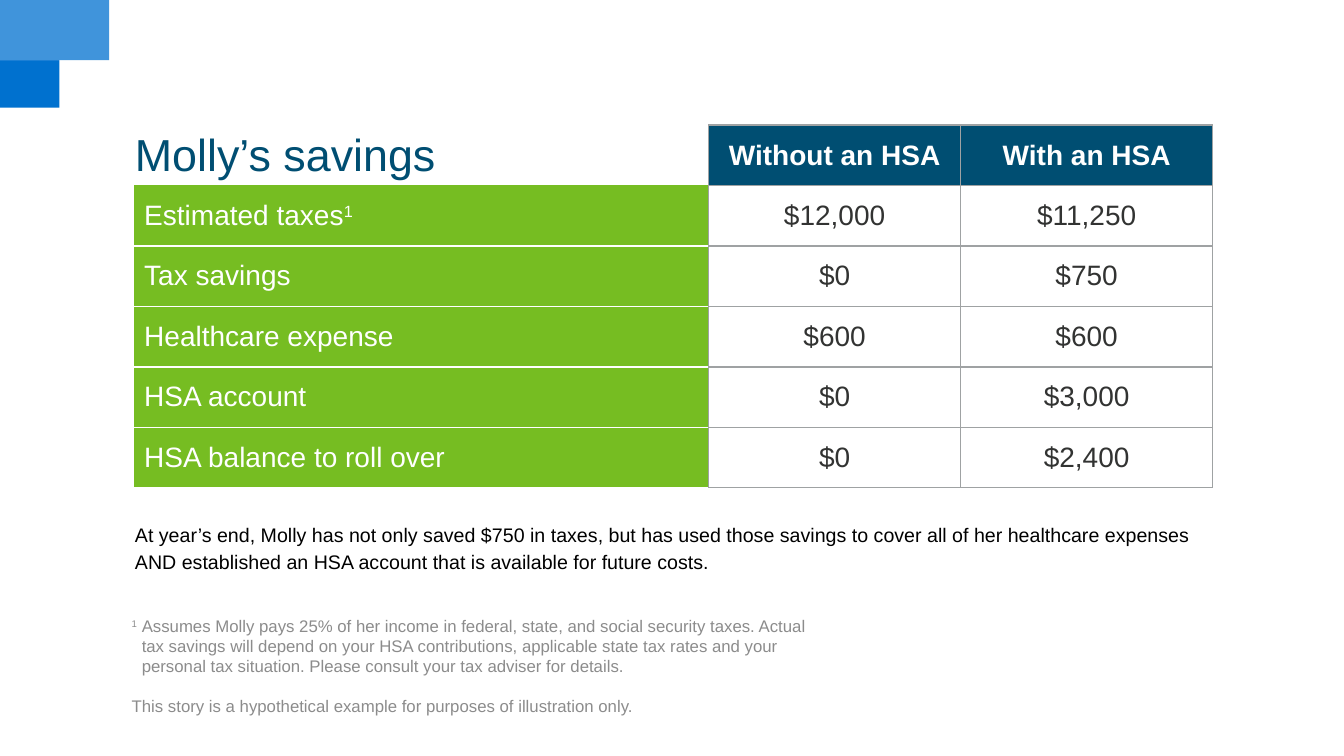
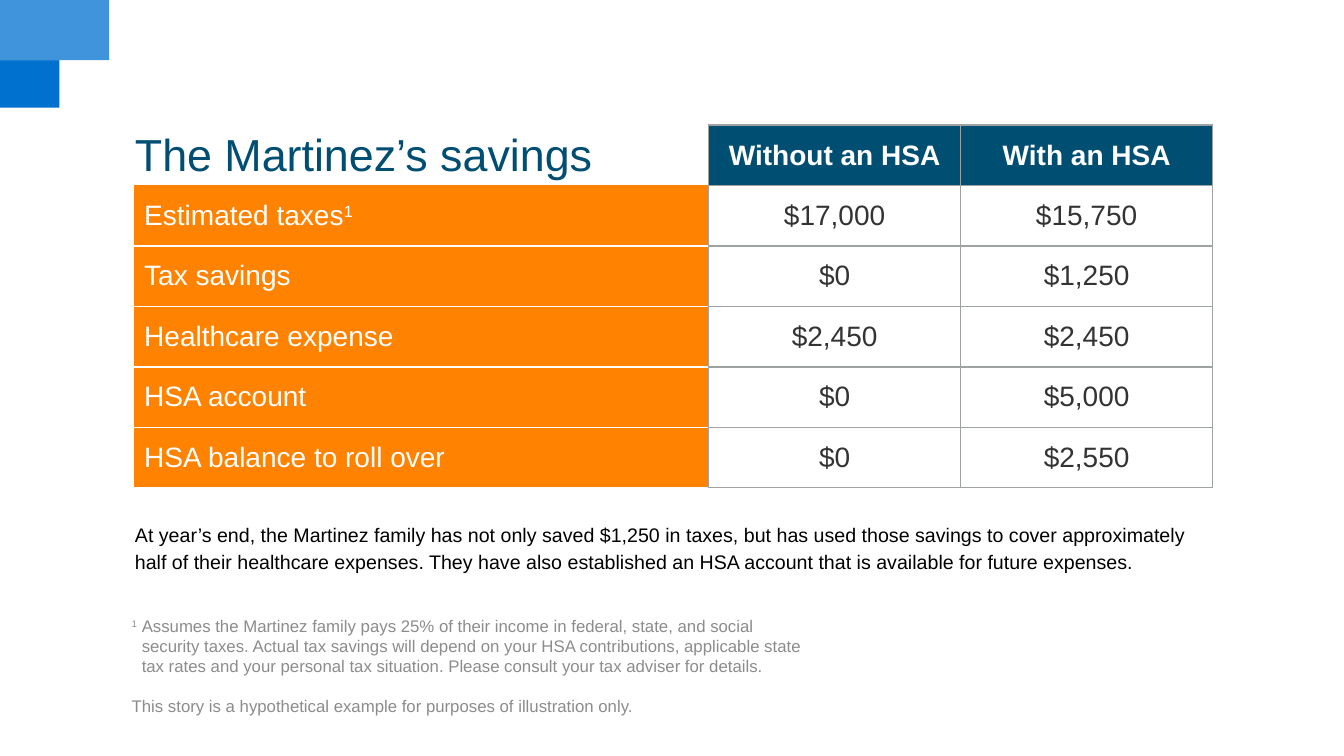
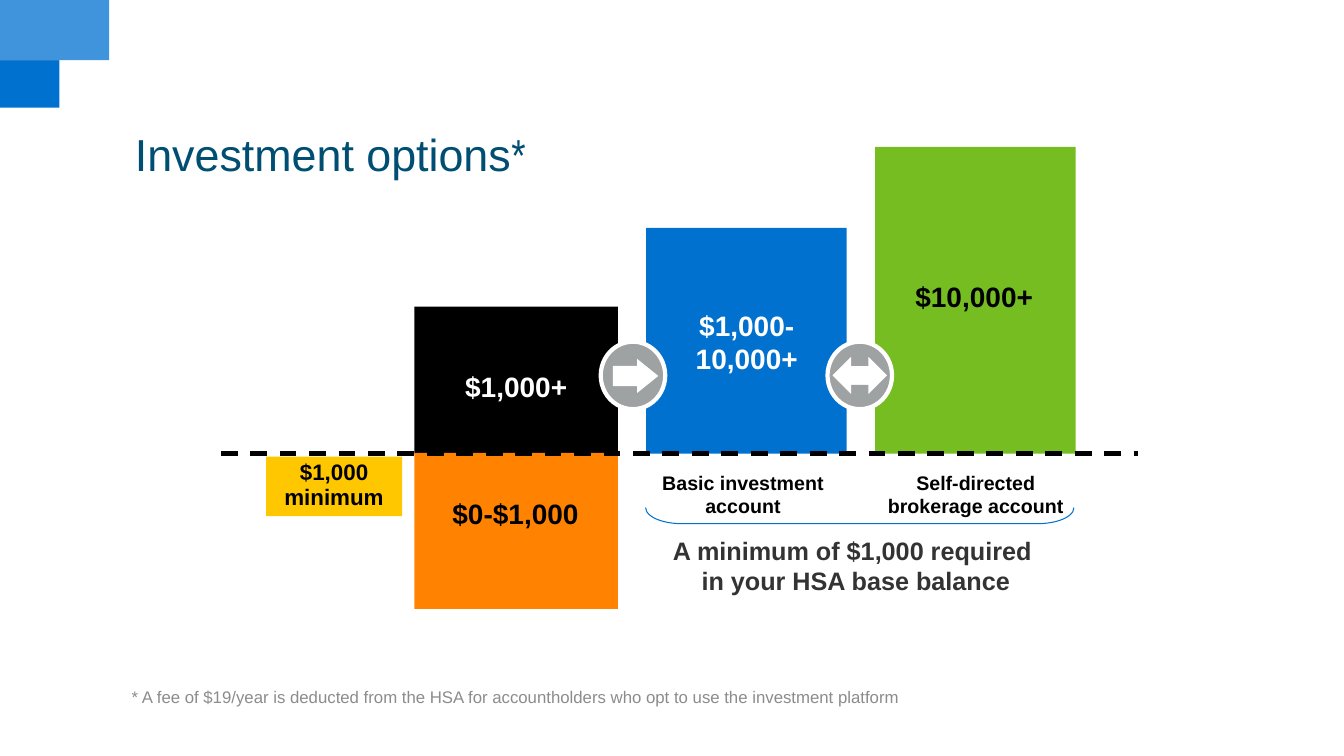
from lxml import etree
from pptx import Presentation
from pptx import util as u
from pptx.dml import color
from pptx.enum import dml, shapes, text
from pptx.oxml import ns

NAVY, BLUE, CORNER_BLUE = "004E72", "0071CE", "0071CF"
GREEN, ORANGE, YELLOW = "76BD22", "FF8300", "FFC700"
BLACK, WHITE, CHARCOAL = "000000", "FFFFFF", "323332"
GRAY, NOTE_GRAY = "9FA2A3", "8C8C8C"
CENTER, LEFT = text.PP_ALIGN.CENTER, text.PP_ALIGN.LEFT
TOP, MIDDLE = text.MSO_ANCHOR.TOP, text.MSO_ANCHOR.MIDDLE
KIND = shapes.MSO_SHAPE


def rgb(value):
    return color.RGBColor.from_string(value)


def add_xml(parent, tag, **attributes):
    return etree.SubElement(parent, ns.qn(tag), attributes)


def write(paragraph, content, size=20, fill=BLACK, bold=False, font="Arial",
          align=LEFT, superscript=False, line_spacing=None):
    paragraph.alignment = align
    if line_spacing:
        paragraph.line_spacing = line_spacing
    for number, line in enumerate(content.split("\n")):
        if number:
            paragraph.add_line_break()
        run = paragraph.add_run()
        run.text = line
        run.font.name, run.font.size = font, u.Pt(size)
        run.font.bold, run.font.color.rgb = bold, rgb(fill)
        if superscript:
            run.font._element.set("baseline", "30000")


class Deck:
    labels = ["Estimated taxes", "Tax savings", "Healthcare expense",
              "HSA account", "HSA balance to roll over"]
    headers = ["Without an HSA", "With an HSA"]

    def __init__(self):
        self.presentation = Presentation()
        self.presentation.slide_width = u.Pt(960)
        self.presentation.slide_height = u.Pt(540)
        self.slide = None

    def start(self, title):
        self.slide = self.presentation.slides.add_slide(self.presentation.slide_layouts[6])
        self.shape(KIND.RECTANGLE, 0, 0, 42.5, 77, CORNER_BLUE)
        self.shape(KIND.RECTANGLE, 0, 0, 78, 43, WHITE)
        tint = self.shape(KIND.RECTANGLE, 0, 0, 78, 43, CORNER_BLUE)
        tone = tint._element.spPr.find(".//" + ns.qn("a:srgbClr"))
        add_xml(tone, "a:alpha", val="75000")
        paragraph = self.box(87, 85.7, 796.3, 52.6, inset=(9.4, 5)).paragraphs[0]
        write(paragraph, title, size=32, fill=NAVY)
        return paragraph

    def shape(self, kind, left, top, width, height, fill=None, line=None,
              line_width=1, adjustments=(), rotation=0):
        shape = self.slide.shapes.add_shape(
            kind, u.Pt(left), u.Pt(top), u.Pt(width), u.Pt(height))
        shape.shadow.inherit = False
        shape.rotation = rotation
        for number, value in enumerate(adjustments):
            shape.adjustments[number] = value
        if fill:
            shape.fill.solid()
            shape.fill.fore_color.rgb = rgb(fill)
        else:
            shape.fill.background()
        if line:
            shape.line.color.rgb = rgb(line)
            shape.line.width = u.Pt(line_width)
        else:
            shape.line.fill.background()
        return shape

    def box(self, left, top, width, height, anchor=TOP, inset=(7.2, 3.6)):
        shape = self.slide.shapes.add_textbox(
            u.Pt(left), u.Pt(top), u.Pt(width), u.Pt(height))
        frame = shape.text_frame
        frame.word_wrap, frame.vertical_anchor = True, anchor
        frame.margin_left = frame.margin_right = u.Pt(inset[0])
        frame.margin_top = frame.margin_bottom = u.Pt(inset[1])
        return frame

    def caption(self, content, left, top, width, height, size=20, fill=BLACK):
        write(self.box(left, top, width, height).paragraphs[0], content,
              size=size, fill=fill, bold=True, align=CENTER)

    def dashed_line(self, left, right, top):
        line = self.slide.shapes.add_connector(
            shapes.MSO_CONNECTOR.STRAIGHT, u.Pt(left), u.Pt(top), u.Pt(right), u.Pt(top))
        line.line.color.rgb = rgb(BLACK)
        line.line.width = u.Pt(3)
        line.line.dash_style = dml.MSO_LINE.DASH
        add_xml(line._element.spPr, "a:effectLst")

    def cell(self, cell, fill=None, **borders):
        properties = cell._tc.get_or_add_tcPr()
        for side in "LRTB":
            border = add_xml(properties, "a:ln" + side, w=str(u.Pt(1)))
            if side in borders:
                solid = add_xml(border, "a:solidFill")
                add_xml(solid, "a:srgbClr", val=borders[side])
            else:
                add_xml(border, "a:noFill")
        if fill:
            cell.fill.solid()
            cell.fill.fore_color.rgb = rgb(fill)
        else:
            cell.fill.background()
        cell.vertical_anchor = MIDDLE
        return cell.text_frame.paragraphs[0]

    def savings_table(self, values, accent):
        table = self.slide.shapes.add_table(
            6, 3, u.Pt(95.8), u.Pt(89.3), u.Pt(770.4), u.Pt(259.2)).table
        table.first_row = table.horz_banding = False
        for column, width in zip(table.columns, (410.4, 180, 180)):
            column.width = u.Pt(width)
        self.cell(table.cell(0, 0), R=GRAY)
        for row, label in enumerate(self.labels, 1):
            borders = {"T": WHITE} if row > 1 else {}
            paragraph = self.cell(table.cell(row, 0), accent, R=GRAY, B=WHITE, **borders)
            write(paragraph, label, fill=WHITE)
            if row == 1:
                write(paragraph, "1", fill=WHITE, superscript=True)
        for row, pair in enumerate([self.headers, *values]):
            header = row == 0
            for column, value in enumerate(pair, 1):
                paragraph = self.cell(table.cell(row, column), NAVY if header else None,
                                      **dict.fromkeys("LRTB", GRAY))
                write(paragraph, value, fill=WHITE if header else CHARCOAL,
                      bold=header, align=CENTER)

    def footnotes(self, assumption):
        frame = self.box(87, 439.2, 499.7, 72.7, anchor=MIDDLE)
        first, second = frame.paragraphs[0], frame.add_paragraph()
        for paragraph in (first, second):
            properties = paragraph._p.get_or_add_pPr()
            properties.set("marL", str(u.Pt(7.2)))
            properties.set("indent", str(-u.Pt(7.2)))
        write(first, "1\t", size=12, fill=NOTE_GRAY, superscript=True)
        write(first, assumption, size=12, fill=NOTE_GRAY)
        second.space_before = u.Pt(14)
        write(second, "This story is a hypothetical example for purposes of illustration only.",
              size=12, fill=NOTE_GRAY)

    def savings(self, title, accent, values, summary, payer):
        self.start(title)
        self.savings_table(values, accent)
        frame = self.box(87, 366.5, 796.3, 60, inset=(9.4, 5))
        write(frame.paragraphs[0], summary, size=14, line_spacing=1.14)
        self.footnotes(
            f"Assumes {payer} income in federal, state, and social security taxes. "
            "Actual tax savings will depend on your HSA contributions, applicable state "
            "tax rates and your personal tax situation. Please consult your tax adviser "
            "for details.")

    def investments(self):
        title = self.start("Investment options")
        write(title, "*", size=32, fill=NAVY, font="Arial Narrow")
        note = self.box(87, 483, 573, 28.8, anchor=MIDDLE)
        write(note.paragraphs[0],
              "* A fee of $19/year is deducted from the HSA for accountholders "
              "who opt to use the investment platform", size=12, fill=NOTE_GRAY)

        baseline = 324
        for left, width, height, fill in ((296, 145.4, 105, BLACK),
                                          (461.5, 143.3, 161.3, BLUE),
                                          (625, 143.3, 219, GREEN)):
            self.shape(KIND.RECTANGLE, left, baseline - height, width, height, fill)
        self.shape(KIND.RECTANGLE, 296, baseline - 0.5, 145.4, 111.5, ORANGE)
        self.dashed_line(157.7, 812.9, baseline)

        self.caption("$1,000+", 286.6, 260.6, 164.2, 31.7, fill=WHITE)
        self.caption("$1,000-10,000+", 478, 216.7, 110.9, 55.4, fill=WHITE)
        self.caption("$10,000+", 633.6, 195.8, 124.6, 31.7)
        self.caption("$0-$1,000", 296.6, 351.4, 143.3, 31.7)
        self.caption("Basic investment account", 448.6, 332.6, 164.2, 41, size=14)
        self.caption("Self-directed brokerage account", 614.9, 332.6, 164.2, 41, size=14)
        self.caption("A minimum of $1,000 required \nin your HSA base balance",
                     457.2, 378.7, 308.2, 51.1, size=18, fill=CHARCOAL)

        minimum = self.shape(KIND.RECTANGLE, 190, 326.2, 97.2, 42.5, YELLOW).text_frame
        minimum.word_wrap, minimum.vertical_anchor = True, TOP
        write(minimum.paragraphs[0], "$1,000\nminimum", size=16, bold=True,
              align=CENTER, line_spacing=0.9)

        for left in (429.1, 591.1):
            self.shape(KIND.OVAL, left, 244.1, 46.1, 48.2, GRAY, line=WHITE, line_width=3)
        self.shape(KIND.RIGHT_ARROW, 437.8, 256.3, 32.4, 24.5, WHITE,
                   adjustments=(0.59, 0.62))
        for kind, left in ((KIND.LEFT_ARROW, 594.7), (KIND.RIGHT_ARROW, 607)):
            self.shape(kind, left, 254.9, 26.6, 26.6, WHITE, adjustments=(0.5, 0.5))
        self.shape(KIND.LEFT_BRACKET, 608.4, 215.3, 11.5, 306, line=BLUE,
                   line_width=0.75, adjustments=(2.26,), rotation=270)


def main():
    deck = Deck()
    deck.savings(
        "Molly’s savings", GREEN,
        [("$12,000", "$11,250"), ("$0", "$750"), ("$600", "$600"),
         ("$0", "$3,000"), ("$0", "$2,400")],
        "At year’s end, Molly has not only saved $750 in taxes, but has used those savings "
        "to cover all of her healthcare expenses AND established an HSA account that is "
        "available for future costs.",
        "Molly pays 25% of her")
    deck.savings(
        "The Martinez’s savings", ORANGE,
        [("$17,000", "$15,750"), ("$0", "$1,250"), ("$2,450", "$2,450"),
         ("$0", "$5,000"), ("$0", "$2,550")],
        "At year’s end, the Martinez family has not only saved $1,250 in taxes, but has used "
        "those savings to cover approximately half of their healthcare expenses. They have "
        "also established an HSA account that is available for future expenses.",
        "the Martinez family pays 25% of their")
    deck.investments()
    deck.presentation.save("out.pptx")


if __name__ == "__main__":
    main()
